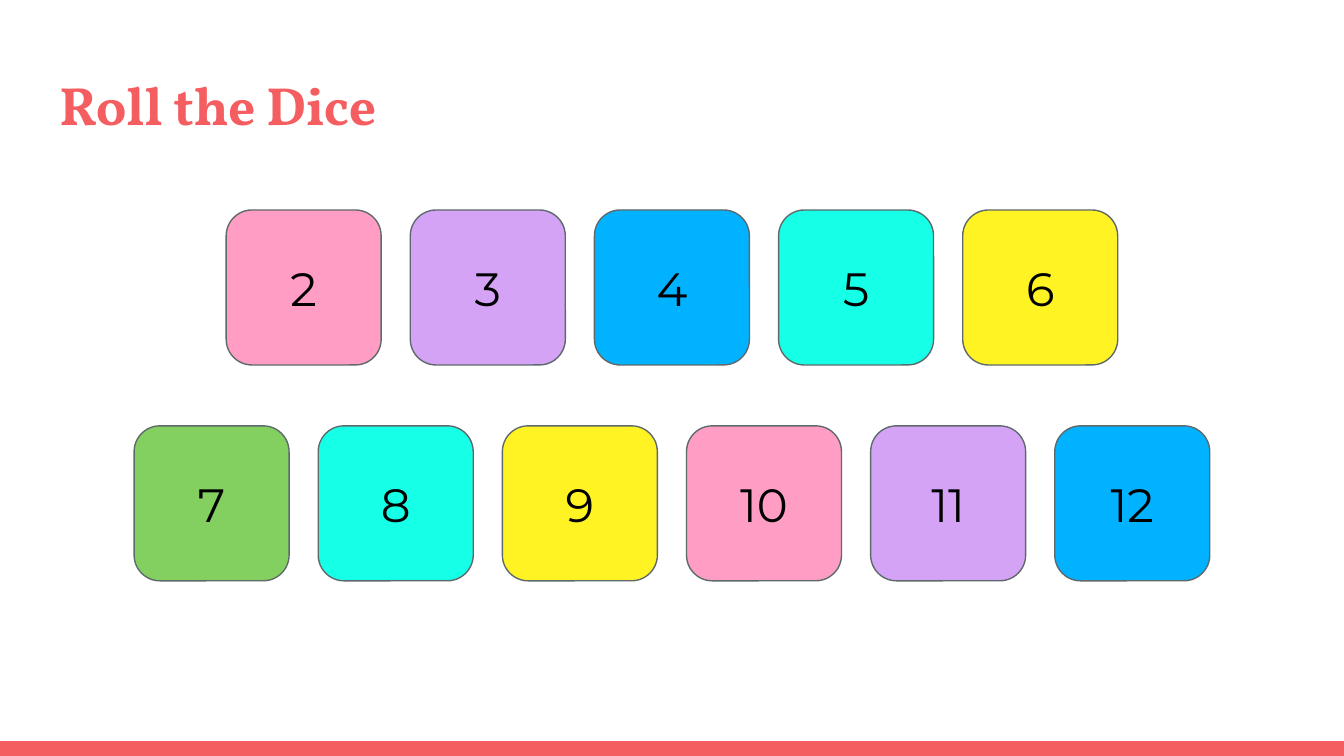
import pptx
import pptx.dml.color
import pptx.enum.shapes
import pptx.enum.text
import pptx.util

Cm = pptx.util.Cm
Pt = pptx.util.Pt
RGBColor = pptx.dml.color.RGBColor

CORAL = RGBColor(0xF5, 0x5E, 0x61)
PINK = RGBColor(0xFF, 0x9D, 0xC5)
LILAC = RGBColor(0xD4, 0xA3, 0xF6)
BLUE = RGBColor(0x00, 0xB2, 0xFF)
AQUA = RGBColor(0x16, 0xFF, 0xE7)
YELLOW = RGBColor(0xFF, 0xF3, 0x24)
GREEN = RGBColor(0x83, 0xD0, 0x61)
SLATE = RGBColor(0x5E, 0x69, 0x6C)
BLACK = RGBColor(0, 0, 0)

PAGE_WIDTH, PAGE_HEIGHT = Cm(25.4), Cm(14.29)
TILE_SIZE, TILE_GAP = Cm(2.93), Cm(0.55)
INSET = Cm(0.25)

# Top of the row, first number, tile colours
ROWS = [
    (Cm(3.97), 2, [PINK, LILAC, BLUE, AQUA, YELLOW]),
    (Cm(8.05), 7, [GREEN, AQUA, YELLOW, PINK, LILAC, BLUE]),
]


def format_text(shape, text, font_name, size, color, bold, align, anchor):
    frame = shape.text_frame
    frame.text = text
    frame.word_wrap = True
    frame.auto_size = pptx.enum.text.MSO_AUTO_SIZE.NONE
    frame.vertical_anchor = anchor
    frame.margin_left = frame.margin_right = INSET
    frame.margin_top = frame.margin_bottom = INSET
    para = frame.paragraphs[0]
    para.alignment = align
    para.font.name = font_name
    para.font.size = size
    para.font.bold = bold
    para.font.color.rgb = color


def add_title(page, left, top, width, height):
    title = page.shapes.title
    title.left, title.top, title.width, title.height = left, top, width, height
    format_text(title, "Roll the Dice", "Vollkorn", Pt(28.8), CORAL, True,
                pptx.enum.text.PP_ALIGN.LEFT, pptx.enum.text.MSO_ANCHOR.TOP)


def add_footer_bar(page, left, top, width, height):
    bar = page.shapes.add_shape(
        pptx.enum.shapes.MSO_SHAPE.RECTANGLE, left, top, width, height)
    bar.shadow.inherit = False
    bar.fill.solid()
    bar.fill.fore_color.rgb = CORAL
    bar.line.fill.background()


def add_tile(page, left, top, size, number, color):
    tile = page.shapes.add_shape(
        pptx.enum.shapes.MSO_SHAPE.ROUNDED_RECTANGLE, left, top, size, size)
    tile.shadow.inherit = False
    tile.fill.solid()
    tile.fill.fore_color.rgb = color
    tile.line.color.rgb = SLATE
    tile.line.width = Pt(0.75)
    format_text(tile, str(number), "Montserrat", Pt(25), BLACK, False,
                pptx.enum.text.PP_ALIGN.CENTER, pptx.enum.text.MSO_ANCHOR.MIDDLE)


def add_tile_row(page, left, top, width, first_number, colors):
    """Centre a row of numbered tiles within the given width."""
    pitch = TILE_SIZE + TILE_GAP
    row_width = len(colors) * pitch - TILE_GAP
    start = left + (width - row_width) // 2
    for index, color in enumerate(colors):
        add_tile(page, start + index * pitch, top, TILE_SIZE,
                 first_number + index, color)


def main():
    deck = pptx.Presentation()
    deck.slide_width, deck.slide_height = PAGE_WIDTH, PAGE_HEIGHT
    page = deck.slides.add_slide(deck.slide_layouts.get_by_name("Title Only"))
    bar_height = Cm(0.28)
    add_footer_bar(page, 0, PAGE_HEIGHT - bar_height, PAGE_WIDTH, bar_height)
    add_title(page, Cm(0.87), Cm(1.1), Cm(23.67), Cm(1.73))
    for top, first_number, colors in ROWS:
        add_tile_row(page, 0, top, PAGE_WIDTH, first_number, colors)
    deck.save("out.pptx")


if __name__ == "__main__":
    main()
